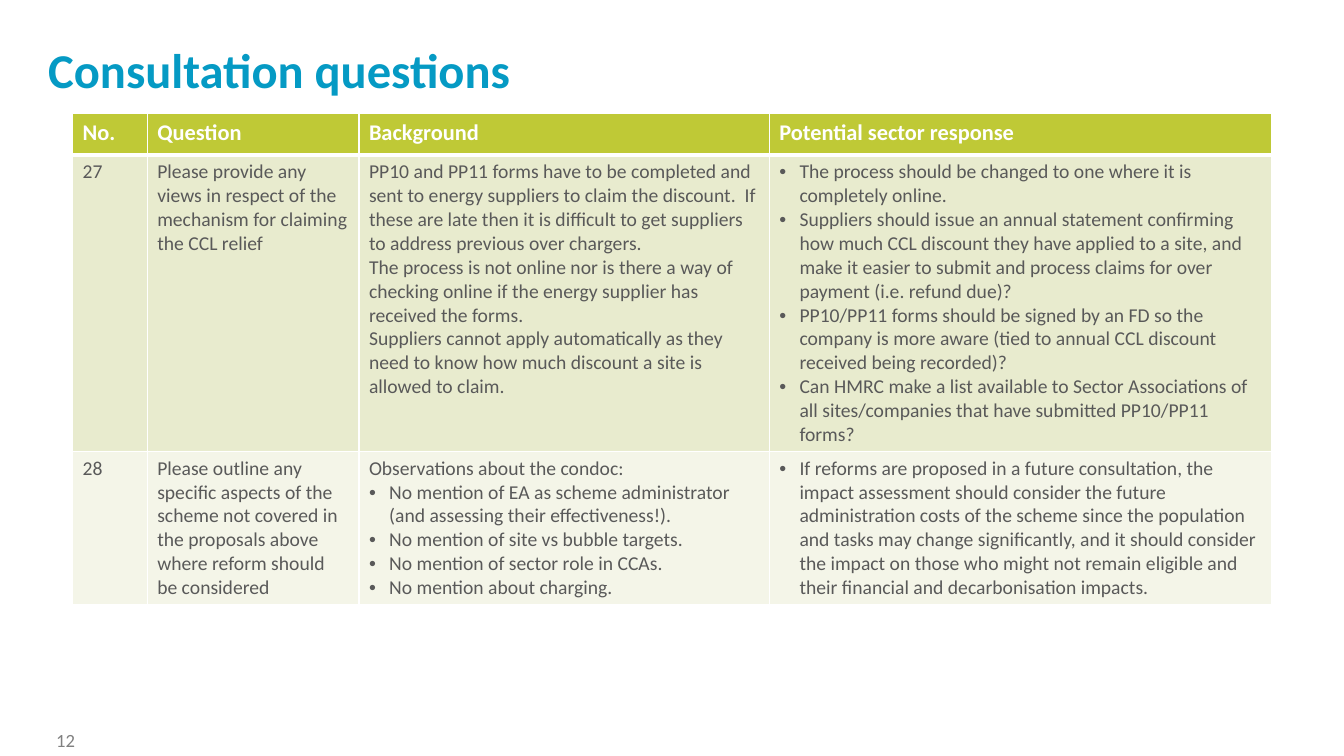
"""Build the consultation questions slide."""
from dataclasses import dataclass

from lxml import etree
from pptx import Presentation
from pptx.dml.color import RGBColor
from pptx.enum import text
from pptx.oxml import ns
from pptx.util import Inches, Pt


@dataclass(frozen=True)
class Theme:
    """Colours, font and type sizes of the slide."""
    font: str = "Calibri"
    title: str = "059AC4"
    header: str = "BFC936"
    bands: tuple = ("E8EBCE", "F4F5E8")
    body: str = "595959"
    number: str = "808080"
    white: str = "FFFFFF"
    title_size: float = 34.7
    header_size: float = 16
    body_size: float = 14
    number_size: float = 13.3


THEME = Theme()
COLUMN_WIDTHS = (0.74, 2.1, 4.07, 4.98)
ROW_HEIGHTS = (0.41, 2.94, 1.52)


def plain(*lines):
    """Return unbulleted paragraphs."""
    return [(line, False) for line in lines]


def bullets(*lines):
    """Return bulleted paragraphs."""
    return [(line, True) for line in lines]


HEADINGS = [plain(heading) for heading in
            ("No.", "Question", "Background", "Potential sector response")]
QUESTIONS = [
    [
        plain("27"),
        plain("Please provide any views in respect of the mechanism for claiming the CCL relief"),
        plain(
            "PP10 and PP11 forms have to be completed and sent to energy suppliers to claim "
            "the discount.  If these are late then it is difficult to get suppliers to address "
            "previous over chargers.",
            "The process is not online nor is there a way of checking online if the energy "
            "supplier has received the forms.",
            "Suppliers cannot apply automatically as they need to know how much discount a "
            "site is allowed to claim.",
        ),
        bullets(
            "The process should be changed to one where it is completely online.",
            "Suppliers should issue an annual statement confirming how much CCL discount they "
            "have applied to a site, and make it easier to submit and process claims for over "
            "payment (i.e. refund due)?",
            "PP10/PP11 forms should be signed by an FD so the company is more aware (tied to "
            "annual CCL discount received being recorded)?",
            "Can HMRC make a list available to Sector Associations of all sites/companies that "
            "have submitted PP10/PP11 forms?",
        ),
    ],
    [
        plain("28"),
        plain("Please outline any specific aspects of the scheme not covered in the proposals "
              "above where reform should be considered"),
        plain("Observations about the condoc:") + bullets(
            "No mention of EA as scheme administrator (and assessing their effectiveness!).",
            "No mention of site vs bubble targets.",
            "No mention of sector role in CCAs.",
            "No mention about charging.",
        ),
        bullets(
            "If reforms are proposed in a future consultation, the impact assessment should "
            "consider the future administration costs of the scheme since the population and "
            "tasks may change significantly, and it should consider the impact on those who "
            "might not remain eligible and their financial and decarbonisation impacts.",
        ),
    ],
]


def add_bullet(paragraph):
    """Give a paragraph a round bullet with a hanging indent."""
    properties = paragraph._p.get_or_add_pPr()
    properties.set("marL", str(Inches(0.2)))
    properties.set("indent", str(-Inches(0.2)))
    etree.SubElement(properties, ns.qn("a:buFont")).set("typeface", "Arial")
    etree.SubElement(properties, ns.qn("a:buChar")).set("char", "•")


def write_paragraphs(frame, paragraphs, size, color, bold=False):
    """Fill a text frame with styled paragraphs."""
    for index, (line, bulleted) in enumerate(paragraphs):
        paragraph = frame.add_paragraph() if index else frame.paragraphs[0]
        if bulleted:
            add_bullet(paragraph)
        run = paragraph.add_run()
        run.text = line
        run.font.name = THEME.font
        run.font.size = Pt(size)
        run.font.bold = bold
        run.font.color.rgb = RGBColor.from_string(color)


def add_label(slide, box, line, size, color, bold=False, anchor=text.MSO_ANCHOR.TOP):
    """Add a one-line text box."""
    frame = slide.shapes.add_textbox(*map(Inches, box)).text_frame
    frame.word_wrap = True
    frame.vertical_anchor = anchor
    write_paragraphs(frame, plain(line), size, color, bold)


def set_borders(cell, widths):
    """Draw white borders of the given point widths around a cell."""
    properties = cell._tc.get_or_add_tcPr()
    for index, (side, width) in enumerate(widths.items()):
        border = etree.Element(ns.qn(f"a:ln{side}"), w=str(Pt(width)))
        fill = etree.SubElement(border, ns.qn("a:solidFill"))
        etree.SubElement(fill, ns.qn("a:srgbClr")).set("val", THEME.white)
        properties.insert(index, border)


def fill_row(row, contents, fill, size, color, top=1, bottom=1, bold=False):
    """Write and style the cells of one table row."""
    for cell, paragraphs in zip(row.cells, contents):
        cell.fill.solid()
        cell.fill.fore_color.rgb = RGBColor.from_string(fill)
        set_borders(cell, {"L": 1, "R": 1, "T": top, "B": bottom})
        write_paragraphs(cell.text_frame, paragraphs, size, color, bold)


def add_question_table(slide):
    """Add the table of questions, background and responses."""
    box = (0.72, 1.13, sum(COLUMN_WIDTHS), sum(ROW_HEIGHTS))
    table = slide.shapes.add_table(
        len(ROW_HEIGHTS), len(COLUMN_WIDTHS), *map(Inches, box)).table
    for column, width in zip(table.columns, COLUMN_WIDTHS):
        column.width = Inches(width)
    for row, height in zip(table.rows, ROW_HEIGHTS):
        row.height = Inches(height)
    header, *body = table.rows
    fill_row(header, HEADINGS, THEME.header, THEME.header_size, THEME.white,
             bottom=3, bold=True)
    for row, contents, band, top in zip(body, QUESTIONS, THEME.bands, (3, 1)):
        fill_row(row, contents, band, THEME.body_size, THEME.body, top=top)


def main():
    """Build and save the presentation."""
    presentation = Presentation()
    presentation.slide_width = Inches(13.33)
    presentation.slide_height = Inches(7.5)
    slide = presentation.slides.add_slide(presentation.slide_layouts[6])
    add_label(slide, (0.38, 0.17, 12, 1.03), "Consultation questions", THEME.title_size,
              THEME.title, bold=True, anchor=text.MSO_ANCHOR.MIDDLE)
    add_question_table(slide)
    add_label(slide, (0.46, 7.18, 0.56, 0.32), "12", THEME.number_size, THEME.number)
    presentation.save("out.pptx")


if __name__ == "__main__":
    main()
